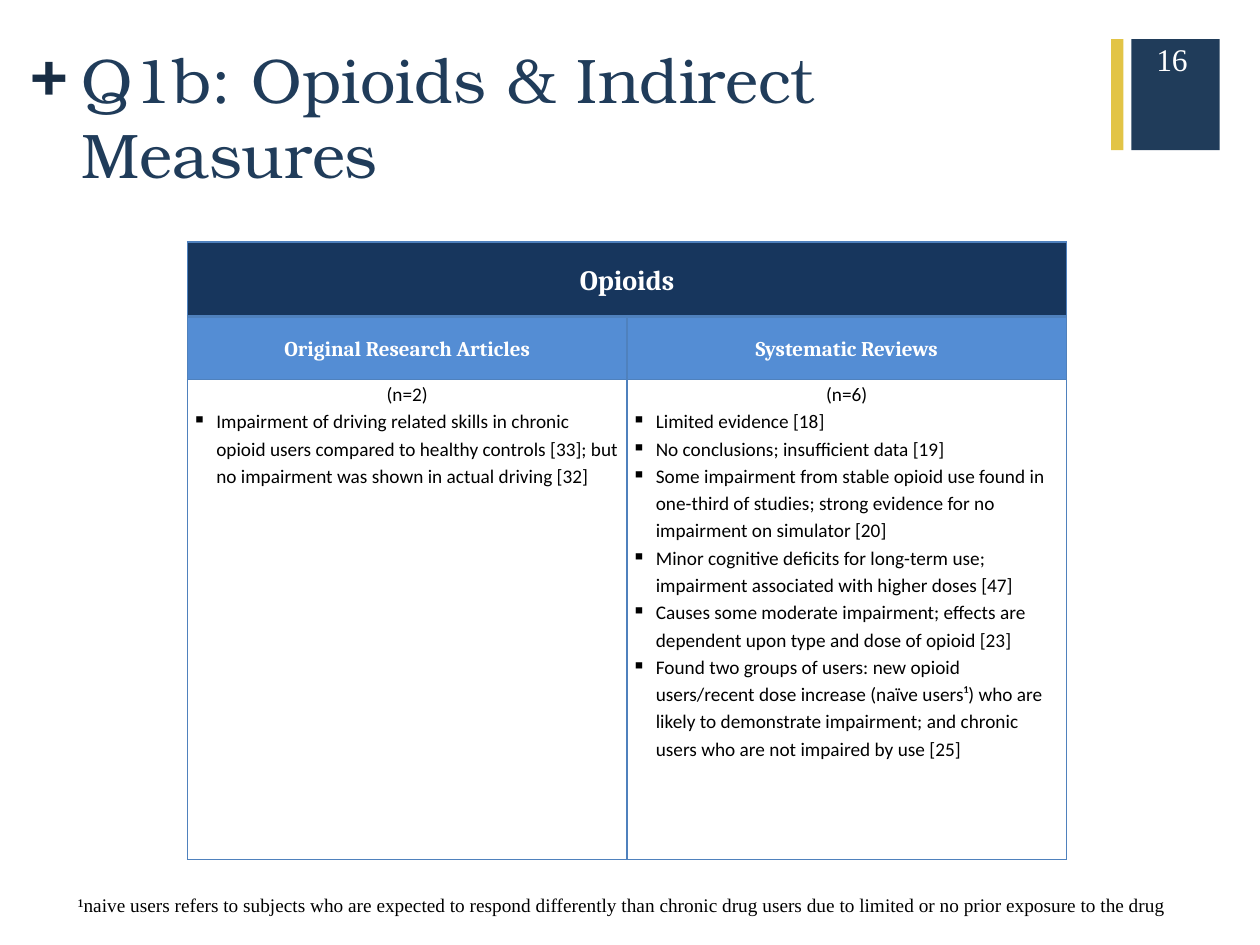
import pptx
import pptx.util
import pptx.dml.color
import pptx.enum.shapes
import pptx.enum.text
import pptx.oxml
import pptx.oxml.ns
from pptx.util import Cm

ALIGN = pptx.enum.text.PP_ALIGN
ANCHOR = pptx.enum.text.MSO_ANCHOR
NAVY, GOLD, GRID = "203C5A", "E2C446", "4F81BD"
WHITE, BLACK = "FFFFFF", "000000"


def colour(code):
    return pptx.dml.color.RGBColor.from_string(code)


def style(face, size, code, bold=False):
    return {"name": face, "size": pptx.util.Pt(size), "bold": bold, "color": code}


class SlideBuilder:
    title = style("TeX Gyre Bonum", 36, NAVY)
    plus = style("TeX Gyre Bonum", 36, "182D44", True)
    number = style("Times New Roman", 18, WHITE)
    footnote = style("Times New Roman", 11, BLACK)
    heading = style("Cambria", 16, WHITE, True)
    subheading = style("Cambria", 12, WHITE, True)
    body = style("Calibri", 11, BLACK)

    def __init__(self, page):
        self.page = page

    def span(self, para, text, look):
        span = para.add_run()
        span.text = text
        for key, value in look.items():
            if key == "color":
                span.font.color.rgb = colour(value)
            else:
                setattr(span.font, key, value)

    def rectangle(self, left, top, width, height, fill):
        box = self.page.shapes.add_shape(
            pptx.enum.shapes.MSO_SHAPE.RECTANGLE,
            Cm(left), Cm(top), Cm(width), Cm(height))
        box.shadow.inherit = False
        box.fill.solid()
        box.fill.fore_color.rgb = colour(fill)
        box.line.fill.background()

    def text(self, left, top, width, height, text, look, **frame_format):
        box = self.page.shapes.add_textbox(
            Cm(left), Cm(top), Cm(width), Cm(height))
        for key, value in {"word_wrap": True, **frame_format}.items():
            setattr(box.text_frame, key, value)
        self.span(box.text_frame.paragraphs[0], text, look)

    def table(self, left, top, widths, heights):
        table = self.page.shapes.add_table(
            len(heights), len(widths), Cm(left), Cm(top),
            Cm(sum(widths)), Cm(sum(heights))).table
        table.first_row = table.horz_banding = False
        for column, width in zip(table.columns, widths):
            column.width = Cm(width)
        for row, height in zip(table.rows, heights):
            row.height = Cm(height)
        return table

    def borders(self, cell, **weights):
        properties = cell._tc.get_or_add_tcPr()
        for side in "LRTB":
            width = pptx.util.Pt(weights.get(side, 1))
            properties.append(pptx.oxml.parse_xml(
                f'<a:ln{side} {pptx.oxml.ns.nsdecls("a")} w="{width}"><a:solidFill>'
                f'<a:srgbClr val="{GRID}"/></a:solidFill></a:ln{side}>'))

    def cell(self, cell, text, look, fill=None, bullets=(), anchor=ANCHOR.MIDDLE,
             **weights):
        layout = {"margin_left": Cm(0.1), "margin_right": Cm(0.1), "margin_top": 0,
                  "margin_bottom": 0, "vertical_anchor": anchor}
        for key, value in layout.items():
            setattr(cell, key, value)
        self.borders(cell, **weights)
        if fill:
            cell.fill.solid()
            cell.fill.fore_color.rgb = colour(fill)
        else:
            cell.fill.background()
        para = cell.text_frame.paragraphs[0]
        para.alignment, para.line_spacing = ALIGN.CENTER, 1.15
        self.span(para, text, look)
        for bullet in bullets:
            para = cell.text_frame.add_paragraph()
            para.line_spacing = 1.15
            self.bullet(para)
            self.span(para, bullet, look)

    def bullet(self, para):
        properties = para._p.get_or_add_pPr()
        properties.set("marL", str(Cm(0.48)))
        properties.set("indent", str(-Cm(0.48)))
        properties.append(pptx.oxml.parse_xml(
            f'<a:buChar {pptx.oxml.ns.nsdecls("a")} char="▪"/>'))


ARTICLES = [
    "Impairment of driving related skills in chronic opioid users compared to "
    "healthy controls [33]; but no impairment was shown in actual driving [32]",
]
REVIEWS = [
    "Limited evidence [18]",
    "No conclusions; insufficient data [19]",
    "Some impairment from stable opioid use found in one-third of studies; "
    "strong evidence for no impairment on simulator [20]",
    "Minor cognitive deficits for long-term use; impairment associated with "
    "higher doses [47]",
    "Causes some moderate impairment; effects are dependent upon type and dose "
    "of opioid [23]",
    "Found two groups of users: new opioid users/recent dose increase (naïve "
    "users¹) who are likely to demonstrate impairment; and chronic users who "
    "are not impaired by use [25]",
]
COLUMNS = [("Original Research Articles", "(n=2)", ARTICLES),
           ("Systematic Reviews", "(n=6)", REVIEWS)]


def main():
    deck = pptx.Presentation()
    deck.slide_width, deck.slide_height = Cm(25.4), Cm(19.05)
    slide = SlideBuilder(deck.slides.add_slide(deck.slide_layouts[6]))

    # Title and page number
    slide.rectangle(22.81, 0.79, 1.78, 2.24, NAVY)
    slide.rectangle(22.4, 0.79, 0.25, 2.24, GOLD)
    slide.text(0.61, 0.64, 0.71, 1.55, "+", slide.plus, word_wrap=False,
               margin_left=0, margin_top=0, margin_right=0, margin_bottom=0)
    slide.text(1.4, 0.69, 20.98, 1.65, "Q1b: Opioids & Indirect Measures",
               slide.title)
    slide.text(23.06, 0.69, 1.55, 1.02, "16", slide.number)

    # Evidence table
    table = slide.table(3.78, 4.88, [8.86, 8.86], [1.5, 1.27, 9.68])
    table.cell(0, 0).merge(table.cell(0, 1))
    slide.cell(table.cell(0, 0), "Opioids", slide.heading, "17365D", B=2.25)
    slide.borders(table.cell(0, 1), B=2.25)
    for index, (name, count, findings) in enumerate(COLUMNS):
        slide.cell(table.cell(1, index), name, slide.subheading, "548DD4", T=2.25)
        slide.cell(table.cell(2, index), count, slide.body, bullets=findings,
                   anchor=ANCHOR.TOP)

    # Footnote
    slide.text(1.32, 17.88, 22.53, 0.74,
               "¹naive users refers to subjects who are expected to respond "
               "differently than chronic drug users due to limited or no prior "
               "exposure to the drug", slide.footnote, word_wrap=False)

    deck.save("out.pptx")


if __name__ == "__main__":
    main()
